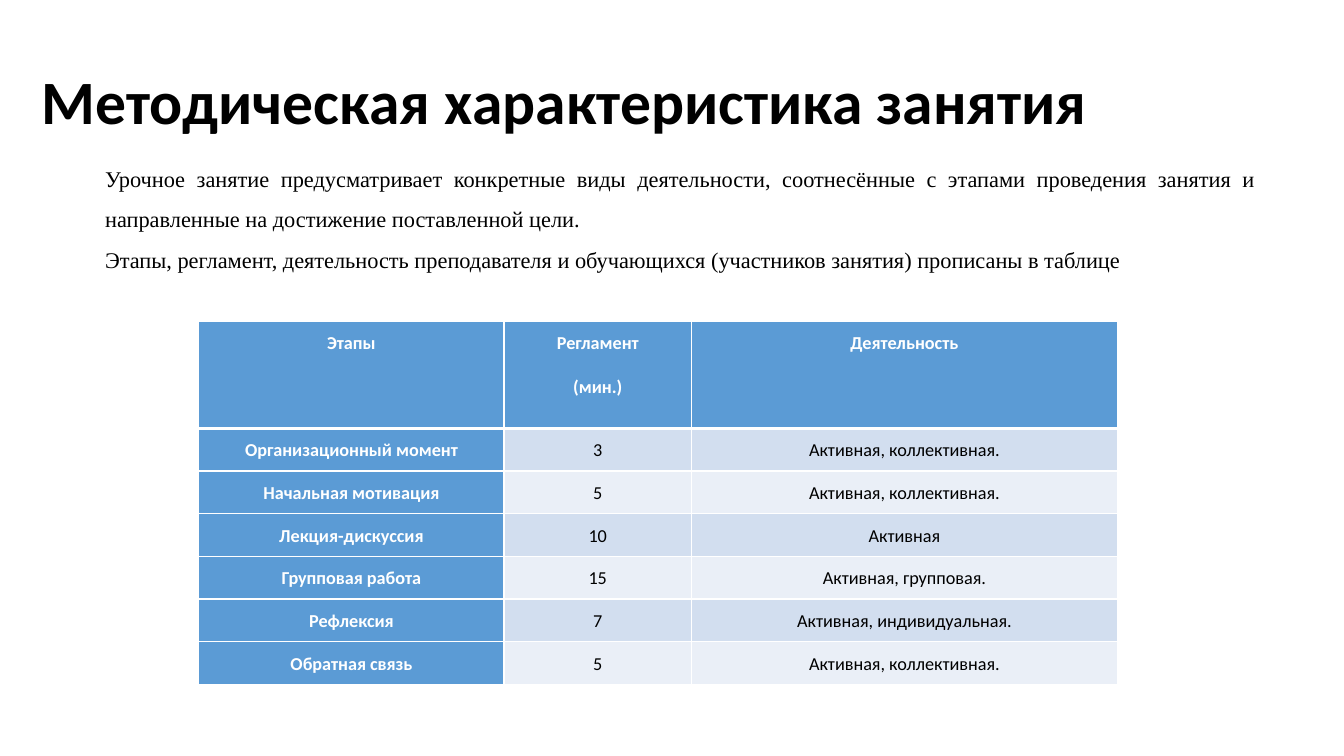
"""Build the slide on the methodical characteristics of a lesson, with its table of stages."""
import lxml.etree
import pptx
import pptx.dml.color
import pptx.enum.text
import pptx.oxml.ns
import pptx.util

Pt = pptx.util.Pt
RGBColor = pptx.dml.color.RGBColor
ALIGN = pptx.enum.text.PP_ALIGN
ANCHOR = pptx.enum.text.MSO_ANCHOR

BLACK = RGBColor(0x00, 0x00, 0x00)
WHITE = RGBColor(0xFF, 0xFF, 0xFF)
BLUE = RGBColor(0x5B, 0x9B, 0xD5)
BAND_DARK = RGBColor(0xD2, 0xDE, 0xEF)
BAND_LIGHT = RGBColor(0xEA, 0xEF, 0xF7)


def write(frame, text, *, size, font="Calibri", color=BLACK, bold=False,
          align=ALIGN.LEFT, spacing=1.0, after=0):
    frame.word_wrap = True
    frame.text = text
    for paragraph in frame.paragraphs:
        paragraph.alignment = align
        paragraph.line_spacing = spacing
        paragraph.space_after = Pt(after)
        paragraph.font.size = Pt(size)
        for run in paragraph.runs:
            run.font.name = font
            run.font.size = Pt(size)
            run.font.bold = bold
            run.font.color.rgb = color


def add_border(cell, side, width):
    properties = cell._tc.get_or_add_tcPr()
    line = lxml.etree.SubElement(properties, pptx.oxml.ns.qn(f"a:ln{side}"), w=str(Pt(width)))
    fill = lxml.etree.SubElement(line, pptx.oxml.ns.qn("a:solidFill"))
    lxml.etree.SubElement(fill, pptx.oxml.ns.qn("a:srgbClr"), val=str(WHITE))


presentation = pptx.Presentation()
presentation.slide_width = Pt(960)
presentation.slide_height = Pt(540)
slide = presentation.slides.add_slide(presentation.slide_layouts[6])

title = slide.shapes.add_textbox(Pt(22.5), Pt(12.5), Pt(828), Pt(124.5)).text_frame
title.vertical_anchor = ANCHOR.MIDDLE
write(title, "Методическая характеристика занятия", size=44, bold=True, spacing=0.9)

introduction = slide.shapes.add_textbox(Pt(68), Pt(105), Pt(836), Pt(94.5)).text_frame
write(introduction,
      "Урочное занятие предусматривает конкретные виды деятельности, соотнесённые с этапами "
      "проведения занятия и направленные на достижение поставленной цели.\n"
      "Этапы, регламент, деятельность преподавателя и обучающихся (участников занятия) "
      "прописаны в таблице",
      size=16, font="Times New Roman", align=ALIGN.JUSTIFY, spacing=1.5)

stages = [
    ("Этапы", "Регламент\n(мин.)", "Деятельность"),
    ("Организационный момент", "3", "Активная, коллективная."),
    ("Начальная мотивация", "5", "Активная, коллективная."),
    ("Лекция-дискуссия", "10", "Активная"),
    ("Групповая работа", "15", "Активная, групповая."),
    ("Рефлексия", "7", "Активная, индивидуальная."),
    ("Обратная связь", "5", "Активная, коллективная."),
]
schedule = slide.shapes.add_table(len(stages), 3, Pt(142), Pt(229.5), Pt(656), Pt(259.5)).table
for column, width in zip(schedule.columns, (218, 134, 304)):
    column.width = Pt(width)

for row, stage in enumerate(stages):
    schedule.rows[row].height = Pt(30.5 if row else 76.5)
    band = BAND_DARK if row % 2 else BAND_LIGHT
    for column, text in enumerate(stage):
        cell = schedule.cell(row, column)
        heading = row == 0 or column == 0
        cell.margin_left = cell.margin_right = cell.margin_top = cell.margin_bottom = 0
        write(cell.text_frame, text, size=13, color=WHITE if heading else BLACK, bold=heading,
              align=ALIGN.CENTER, spacing=1.5, after=0 if row else 7.5)
        for side, width in (("L", 1), ("R", 1), ("T", 3 if row == 1 else 1),
                            ("B", 1 if row else 3)):
            add_border(cell, side, width)
        cell.fill.solid()
        cell.fill.fore_color.rgb = BLUE if heading else band

presentation.save("out.pptx")
